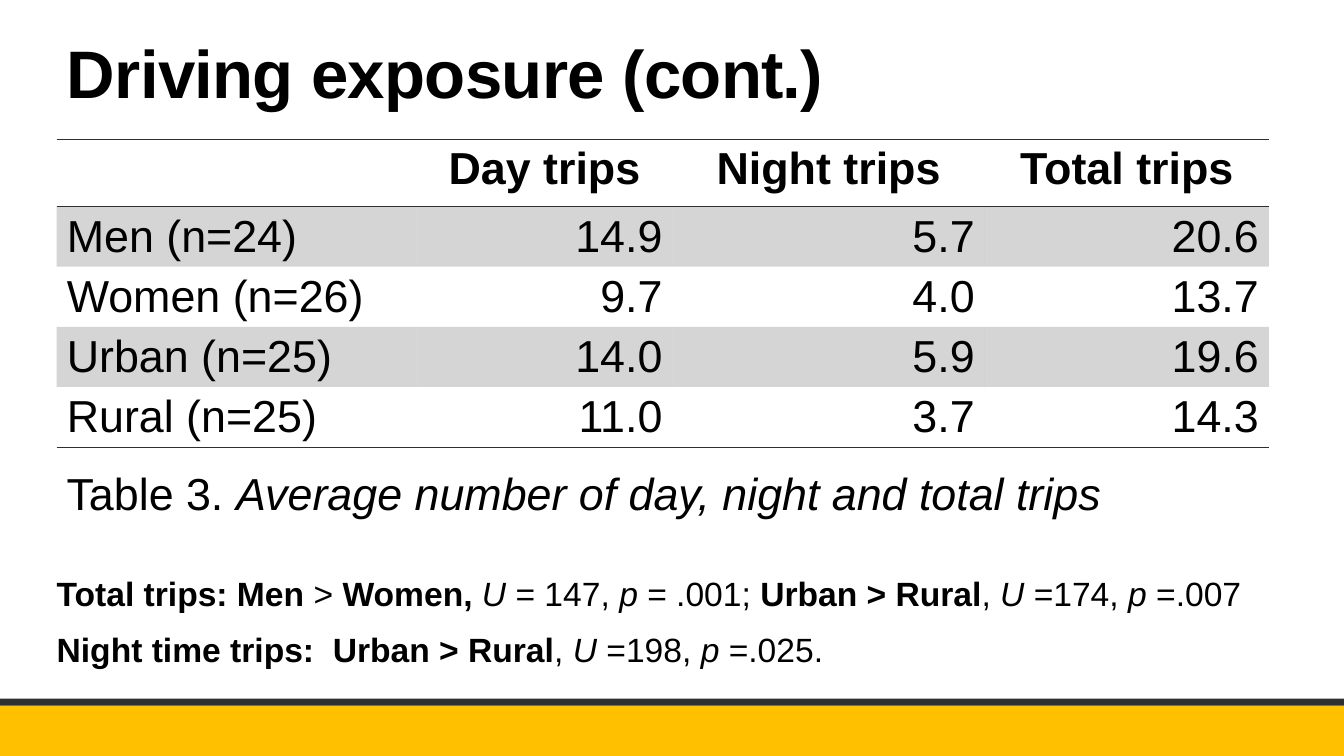
from lxml import etree
from pptx import Presentation
from pptx.dml.color import RGBColor
from pptx.enum.shapes import MSO_SHAPE
from pptx.enum.text import MSO_ANCHOR, MSO_AUTO_SIZE, PP_ALIGN
from pptx.oxml.ns import qn
from pptx.util import Pt

LEFT, CENTER, RIGHT = PP_ALIGN.LEFT, PP_ALIGN.CENTER, PP_ALIGN.RIGHT
BLACK, CHARCOAL, AMBER = "000000", "2F2F2F", "FFC000"
NO_STYLE_NO_GRID = "{2D5ABB26-0587-4C30-8999-92F81FD0307C}"

TITLE = "Driving exposure (cont.)"
TRIPS = [
    ("", "Day trips", "Night trips", "Total trips"),
    ("Men (n=24)", "14.9", "5.7", "20.6"),
    ("Women (n=26)", "9.7", "4.0", "13.7"),
    ("Urban (n=25)", "14.0", "5.9", "19.6"),
    ("Rural (n=25)", "11.0", "3.7", "14.3"),
]
# Runs are (text, style), where style is "" for plain, "b" bold or "i" italic.
CAPTION = [("Table 3. ", ""), ("Average number of day, night and total trips", "i")]
FINDINGS = [
    [("Total trips: Men", "b"), (" > ", ""), ("Women, ", "b"), ("U ", "i"),
     ("= 147, ", ""), ("p", "i"), (" = .001; ", ""), ("Urban > Rural", "b"),
     (", ", ""), ("U", "i"), (" =174, ", ""), ("p", "i"), (" =.007", "")],
    [("Night time trips:  Urban > Rural", "b"), (", ", ""), ("U", "i"),
     (" =198, ", ""), ("p", "i"), (" =.025.", "")],
]

SLIDE_W, SLIDE_H = 960, 540
MARGIN = 40.5
TEXT_W = 900.5
COLUMN_WIDTHS = [257, 183, 223, 203]
ROW_HEIGHTS = [48] + [43] * 4
BARS = [(504, 36, AMBER), (499, 5, CHARCOAL)]


def rgb(color):
    return RGBColor.from_string(color)


def set_font(paragraph, size, bold=None):
    font = paragraph.font
    font.name, font.size, font.bold = "Arial", Pt(size), bold
    font.color.rgb = rgb(BLACK)


def add_runs(paragraph, runs, size):
    set_font(paragraph, size)
    for text, style in runs:
        run = paragraph.add_run()
        run.text = text
        run.font.bold = style == "b"
        run.font.italic = style == "i"


def add_text_frame(slide, top, height):
    box = slide.shapes.add_textbox(Pt(MARGIN), Pt(top), Pt(TEXT_W), Pt(height))
    box.text_frame.word_wrap = True
    return box.text_frame


def add_border(cell, edge):
    """Draw a 1 pt rule on one edge, "lnT" or "lnB"."""
    line = etree.SubElement(cell._tc.get_or_add_tcPr(), qn(f"a:{edge}"), w=str(Pt(1)))
    fill = etree.SubElement(line, qn("a:solidFill"))
    etree.SubElement(fill, qn("a:srgbClr"), val=CHARCOAL)


def shade(cell):
    """Fill a cell with charcoal at 20 % opacity."""
    cell.fill.solid()
    cell.fill.fore_color.rgb = rgb(CHARCOAL)
    color = cell._tc.tcPr.find(f".//{qn('a:solidFill')}[last()]/..")
    color = cell._tc.tcPr.find(qn("a:solidFill")).find(qn("a:srgbClr"))
    etree.SubElement(color, qn("a:alpha"), val="20000")


def add_bars(slide):
    for top, height, color in BARS:
        bar = slide.shapes.add_shape(
            MSO_SHAPE.RECTANGLE, 0, Pt(top), Pt(SLIDE_W), Pt(height))
        bar.shadow.inherit = False
        bar.fill.solid()
        bar.fill.fore_color.rgb = rgb(color)
        bar.line.fill.background()


def format_title(slide):
    title = slide.shapes.title
    title.left, title.top, title.width, title.height = (
        Pt(MARGIN), Pt(18.5), Pt(792), Pt(65))
    frame = title.text_frame
    frame.text = TITLE
    frame.auto_size = MSO_AUTO_SIZE.NONE
    frame.vertical_anchor = MSO_ANCHOR.BOTTOM
    heading = frame.paragraphs[0]
    heading.alignment = LEFT
    heading.line_spacing = 0.85
    set_font(heading, 48, bold=True)
    heading.runs[0]._r.get_or_add_rPr().set("spc", "-50")


def add_trips_table(slide):
    table = slide.shapes.add_table(
        len(TRIPS), len(COLUMN_WIDTHS), Pt(MARGIN), Pt(99.5),
        Pt(sum(COLUMN_WIDTHS)), Pt(sum(ROW_HEIGHTS))).table
    table.first_row = table.horz_banding = False
    table._tbl.tblPr.find(qn("a:tableStyleId")).text = NO_STYLE_NO_GRID
    for column, width in zip(table.columns, COLUMN_WIDTHS):
        column.width = Pt(width)
    for r, values in enumerate(TRIPS):
        table.rows[r].height = Pt(ROW_HEIGHTS[r])
        header = r == 0
        for c, value in enumerate(values):
            cell = table.cell(r, c)
            cell.margin_top, cell.margin_bottom = Pt(3.6), Pt(2.4)
            cell.text = value
            entry = cell.text_frame.paragraphs[0]
            entry.alignment = CENTER if header else RIGHT if c else LEFT
            set_font(entry, 32, bold=header)
            if header:
                add_border(cell, "lnT")
            if header or r == len(TRIPS) - 1:
                add_border(cell, "lnB")
            if r % 2:
                shade(cell)
            else:
                cell.fill.background()


def add_caption(slide):
    frame = add_text_frame(slide, 329, 46)
    add_runs(frame.paragraphs[0], CAPTION, 32)


def add_findings(slide):
    frame = add_text_frame(slide, 409, 88)
    frame.margin_left = frame.margin_right = 0
    for i, runs in enumerate(FINDINGS):
        finding = frame.add_paragraph() if i else frame.paragraphs[0]
        finding.line_spacing = 0.9
        finding.space_before, finding.space_after = Pt(12), Pt(2)
        add_runs(finding, runs, 24)


def main():
    deck = Presentation()
    deck.slide_width, deck.slide_height = Pt(SLIDE_W), Pt(SLIDE_H)
    slide = deck.slides.add_slide(deck.slide_layouts[5])
    add_bars(slide)
    format_title(slide)
    add_trips_table(slide)
    add_caption(slide)
    add_findings(slide)
    deck.save("out.pptx")


if __name__ == "__main__":
    main()
